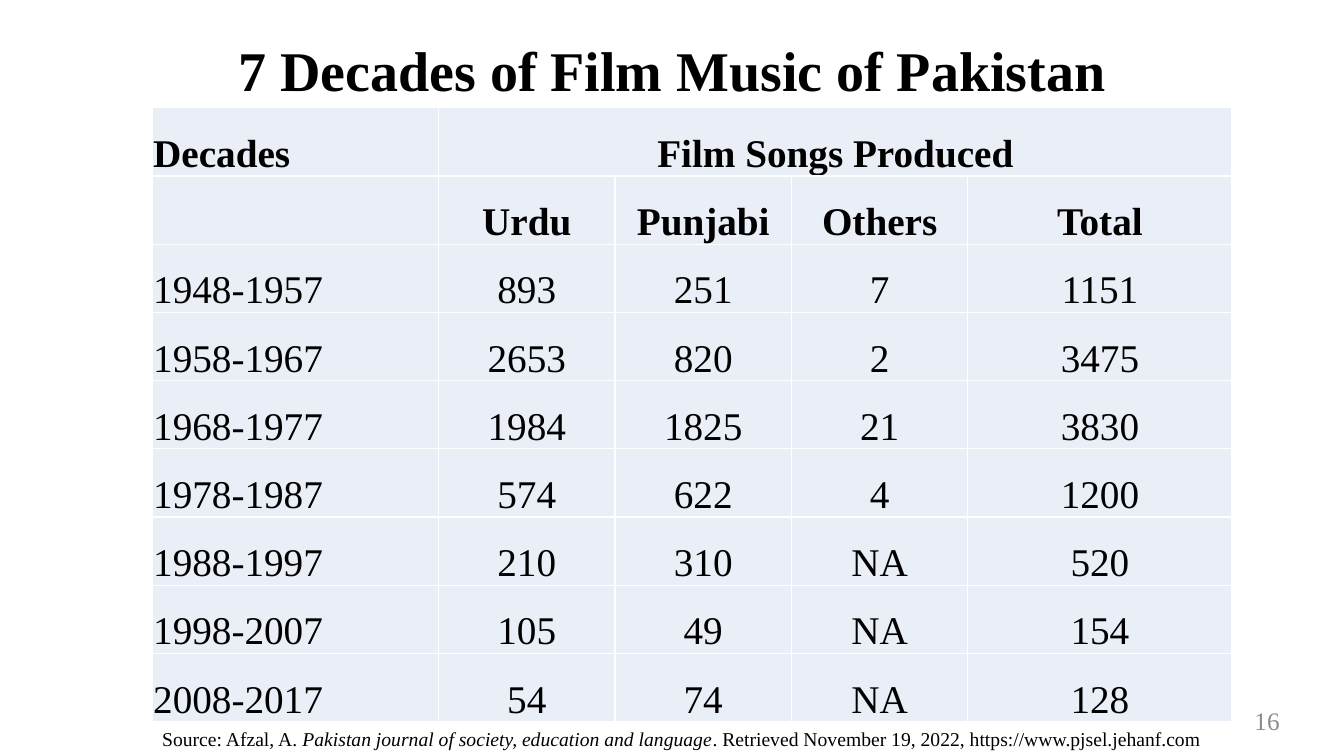
import dataclasses

import pptx
import pptx.dml.color
import pptx.enum.text
import pptx.oxml
import pptx.oxml.ns
import pptx.util

HEADING = "7 Decades of Film Music of Pakistan"
SONGS = [
    ("Decades", "Film Songs Produced", "", "", ""),
    ("", "Urdu", "Punjabi", "Others", "Total"),
    ("1948-1957", "893", "251", "7", "1151"),
    ("1958-1967", "2653", "820", "2", "3475"),
    ("1968-1977", "1984", "1825", "21", "3830"),
    ("1978-1987", "574", "622", "4", "1200"),
    ("1988-1997", "210", "310", "NA", "520"),
    ("1998-2007", "105", "49", "NA", "154"),
    ("2008-2017", "54", "74", "NA", "128"),
]
HEADER_ROWS = 2
SOURCE = [
    ("Source: Afzal, A. ", False),
    ("Pakistan journal of society, education and language", True),
    (". Retrieved November 19, 2022, https://www.pjsel.jehanf.com", False),
]
PAGE = "16"

WIDTH, HEIGHT = 13.33, 7.5
LEFT, TOP, TABLE_HEIGHT = 1.51, 1.07, 6.09
COLUMNS = (2.84, 1.75, 1.75, 1.75, 2.62)


@dataclasses.dataclass(frozen=True)
class Theme:
    font: str = "Times New Roman"
    ink: str = "000000"
    muted: str = "8C8C8C"
    cell: str = "EAEFF7"
    border: str = "FFFFFF"
    title: int = 40
    body: int = 28
    note: int = 14
    page: int = 18


THEME = Theme()
ALIGN = pptx.enum.text.PP_ALIGN
ANCHOR = pptx.enum.text.MSO_ANCHOR
inches = pptx.util.Inches


def rgb(code):
    return pptx.dml.color.RGBColor.from_string(code)


def style(paragraph, size, color=THEME.ink, bold=False, align=ALIGN.LEFT):
    paragraph.alignment = align
    for run in paragraph.runs:
        run.font.name = THEME.font
        run.font.size = pptx.util.Pt(size)
        run.font.bold = bold
        run.font.color.rgb = rgb(color)


def add_borders(cell):
    properties = cell._tc.get_or_add_tcPr()
    for position, side in enumerate(("lnL", "lnR", "lnT", "lnB")):
        properties.insert(position, pptx.oxml.parse_xml(
            f'<a:{side} {pptx.oxml.ns.nsdecls("a")} w="12700"><a:solidFill>'
            f'<a:srgbClr val="{THEME.border}"/></a:solidFill></a:{side}>'))


def add_text(slide, left, top, width, height, anchor=ANCHOR.TOP):
    frame = slide.shapes.add_textbox(
        inches(left), inches(top), inches(width), inches(height)).text_frame
    frame.word_wrap = True
    frame.vertical_anchor = anchor
    return frame.paragraphs[0]


def add_heading(slide):
    title = slide.shapes.title
    title.left, title.top = 0, 0
    title.width, title.height = inches(WIDTH), inches(1.45)
    title.text_frame.text = HEADING
    title.text_frame.vertical_anchor = ANCHOR.MIDDLE
    paragraph = title.text_frame.paragraphs[0]
    paragraph.line_spacing = 0.9
    style(paragraph, THEME.title, bold=True, align=ALIGN.CENTER)


def add_songs(slide):
    table = slide.shapes.add_table(
        len(SONGS), len(COLUMNS), inches(LEFT), inches(TOP),
        inches(sum(COLUMNS)), inches(TABLE_HEIGHT)).table
    table.first_row = table.horz_banding = False
    for column, width in zip(table.columns, COLUMNS):
        column.width = inches(width)
    for r, entries in enumerate(SONGS):
        table.rows[r].height = inches(TABLE_HEIGHT / len(SONGS))
        for c, entry in enumerate(entries):
            cell = table.cell(r, c)
            cell.fill.solid()
            cell.fill.fore_color.rgb = rgb(THEME.cell)
            add_borders(cell)
            cell.vertical_anchor = ANCHOR.BOTTOM
            cell.margin_left = cell.margin_right = cell.margin_top = inches(0.01)
            cell.margin_bottom = 0
            if entry:
                cell.text_frame.text = entry
                style(cell.text_frame.paragraphs[0], THEME.body,
                      bold=r < HEADER_ROWS,
                      align=ALIGN.CENTER if c else ALIGN.LEFT)
    table.cell(0, 1).merge(table.cell(0, len(COLUMNS) - 1))


def add_footer(slide):
    source = add_text(slide, LEFT, TOP + TABLE_HEIGHT, 10.6, 0.34)
    for words, italic in SOURCE:
        run = source.add_run()
        run.text = words
        run.font.italic = italic
    style(source, THEME.note)
    page = add_text(slide, 9.79, 6.95, 3, 0.4, ANCHOR.MIDDLE)
    page.text = PAGE
    style(page, THEME.page, THEME.muted, align=ALIGN.RIGHT)


def main():
    deck = pptx.Presentation()
    deck.slide_width, deck.slide_height = inches(WIDTH), inches(HEIGHT)
    slide = deck.slides.add_slide(deck.slide_layouts.get_by_name("Title Only"))
    add_heading(slide)
    add_songs(slide)
    add_footer(slide)
    deck.save("out.pptx")


if __name__ == "__main__":
    main()
